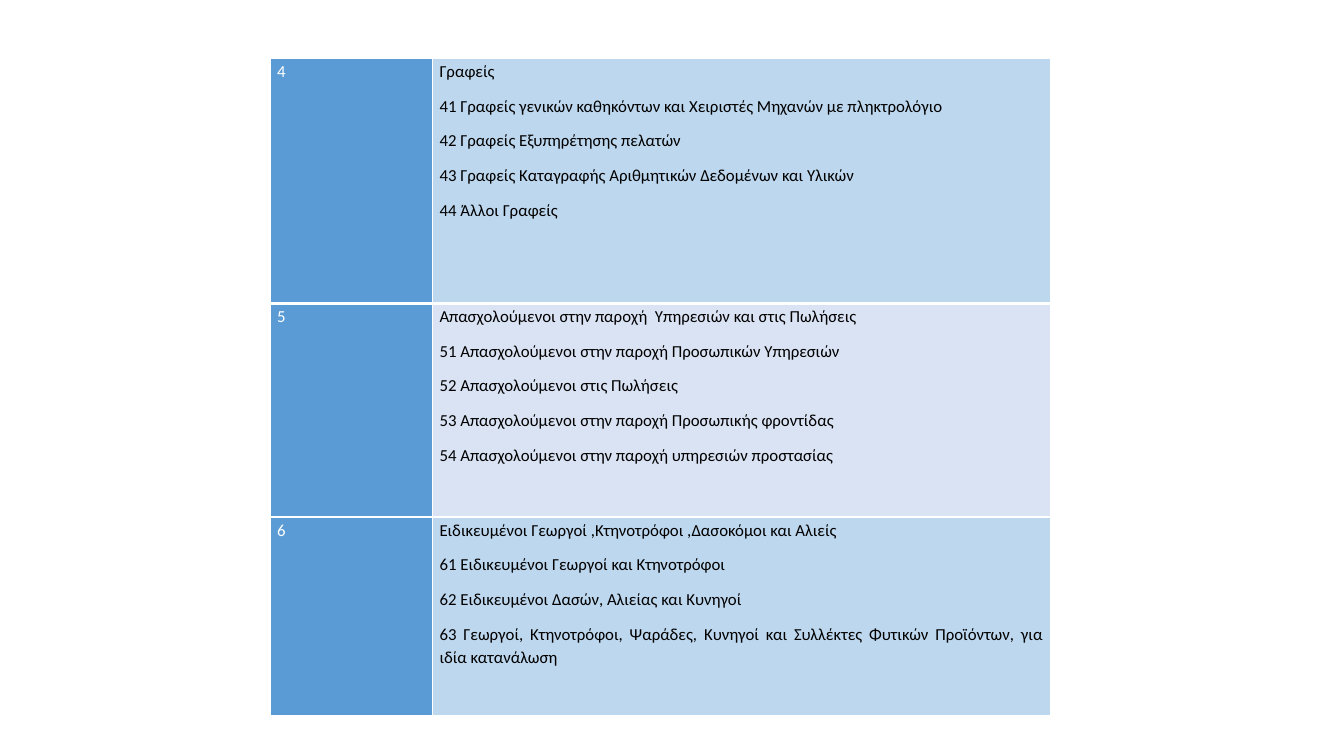
"""Build a slide with a table of occupation groups 4 to 6."""
from lxml import etree
from pptx import Presentation
from pptx.dml.color import RGBColor
from pptx.enum.text import PP_ALIGN
from pptx.oxml.ns import qn
from pptx.util import Inches, Pt

JUSTIFY = PP_ALIGN.JUSTIFY
BLANK_LAYOUT = 6

WHITE = RGBColor(0xFF, 0xFF, 0xFF)
BLACK = RGBColor(0x00, 0x00, 0x00)
CODE_BLUE = RGBColor(0x5B, 0x9B, 0xD5)
BAND_BLUE = RGBColor(0xBD, 0xD7, 0xEE)
BAND_LAVENDER = RGBColor(0xDA, 0xE3, 0xF3)
BANDS = (BAND_BLUE, BAND_LAVENDER)

SLIDE_WIDTH, SLIDE_HEIGHT = Inches(13.33), Inches(7.5)
TABLE_LEFT, TABLE_TOP = Inches(2.68), Inches(0.58)
COLUMN_WIDTHS = (Inches(1.61), Inches(6.13))
ROW_HEIGHTS = (Inches(2.43), Inches(2.12), Inches(1.97))

CELL_FORMAT = {
    "margin_left": Inches(0.07),
    "margin_right": Inches(0.07),
    "margin_top": 0,
    "margin_bottom": 0,
}
PARAGRAPH_FORMAT = {"alignment": JUSTIFY, "line_spacing": 1.15, "space_after": Pt(8)}
FONT_FORMAT = {"name": "Calibri", "size": Pt(12), "bold": False}
PLAIN_TABLE = {"first_row": False, "horz_banding": False}

THIN, THICK = Pt(1), Pt(3)

GROUPS = {
    "4": (
        "Γραφείς",
        "41 Γραφείς γενικών καθηκόντων και Χειριστές Μηχανών με πληκτρολόγιο",
        "42 Γραφείς Εξυπηρέτησης πελατών",
        "43 Γραφείς Καταγραφής Αριθμητικών Δεδομένων και Υλικών",
        "44 Άλλοι Γραφείς",
    ),
    "5": (
        "Απασχολούμενοι στην παροχή  Υπηρεσιών και στις Πωλήσεις",
        "51 Απασχολούμενοι στην παροχή Προσωπικών Υπηρεσιών",
        "52 Απασχολούμενοι στις Πωλήσεις",
        "53 Απασχολούμενοι στην παροχή Προσωπικής φροντίδας",
        "54 Απασχολούμενοι στην παροχή υπηρεσιών προστασίας",
    ),
    "6": (
        "Ειδικευμένοι Γεωργοί ,Κτηνοτρόφοι ,Δασοκόμοι και Αλιείς",
        "61 Ειδικευμένοι Γεωργοί και Κτηνοτρόφοι",
        "62 Ειδικευμένοι Δασών, Αλιείας και Κυνηγοί",
        "63 Γεωργοί, Κτηνοτρόφοι, Ψαράδες, Κυνηγοί και Συλλέκτες Φυτικών "
        "Προϊόντων, για ιδία κατανάλωση",
    ),
}


def apply_format(target, values):
    """Set each attribute of the target from a dict of values."""
    for name, value in values.items():
        setattr(target, name, value)


def set_borders(cell, bottom_width):
    """Draw white lines on the four sides of a cell."""
    properties = cell._tc.get_or_add_tcPr()
    widths = {"a:lnL": THIN, "a:lnR": THIN, "a:lnT": THIN, "a:lnB": bottom_width}
    for tag, width in widths.items():
        line = etree.SubElement(properties, qn(tag), w=str(width))
        fill = etree.SubElement(line, qn("a:solidFill"))
        etree.SubElement(fill, qn("a:srgbClr"), val=str(WHITE))


def fill_cell(cell, lines, background, text_color, bottom_width):
    """Write lines as justified paragraphs and colour the cell."""
    apply_format(cell, CELL_FORMAT)
    set_borders(cell, bottom_width)
    cell.fill.solid()
    cell.fill.fore_color.rgb = background
    cell.text = "\n".join(lines)
    for paragraph in cell.text_frame.paragraphs:
        apply_format(paragraph, PARAGRAPH_FORMAT)
        for run in paragraph.runs:
            apply_format(run.font, FONT_FORMAT)
            run.font.color.rgb = text_color


def add_group_table(slide):
    """Add the table with one row per occupation group."""
    table = slide.shapes.add_table(
        len(ROW_HEIGHTS), len(COLUMN_WIDTHS), TABLE_LEFT, TABLE_TOP,
        sum(COLUMN_WIDTHS), sum(ROW_HEIGHTS),
    ).table
    apply_format(table, PLAIN_TABLE)
    for column, width in zip(table.columns, COLUMN_WIDTHS):
        column.width = width
    for index, (code, lines) in enumerate(GROUPS.items()):
        table.rows[index].height = ROW_HEIGHTS[index]
        bottom_width = THICK if index == 0 else THIN
        band = BANDS[index % len(BANDS)]
        fill_cell(table.cell(index, 0), [code], CODE_BLUE, WHITE, bottom_width)
        fill_cell(table.cell(index, 1), lines, band, BLACK, bottom_width)


def main():
    """Create the presentation and save it."""
    presentation = Presentation()
    apply_format(presentation, {"slide_width": SLIDE_WIDTH, "slide_height": SLIDE_HEIGHT})
    slide = presentation.slides.add_slide(presentation.slide_layouts[BLANK_LAYOUT])
    add_group_table(slide)
    presentation.save("out.pptx")


if __name__ == "__main__":
    main()
